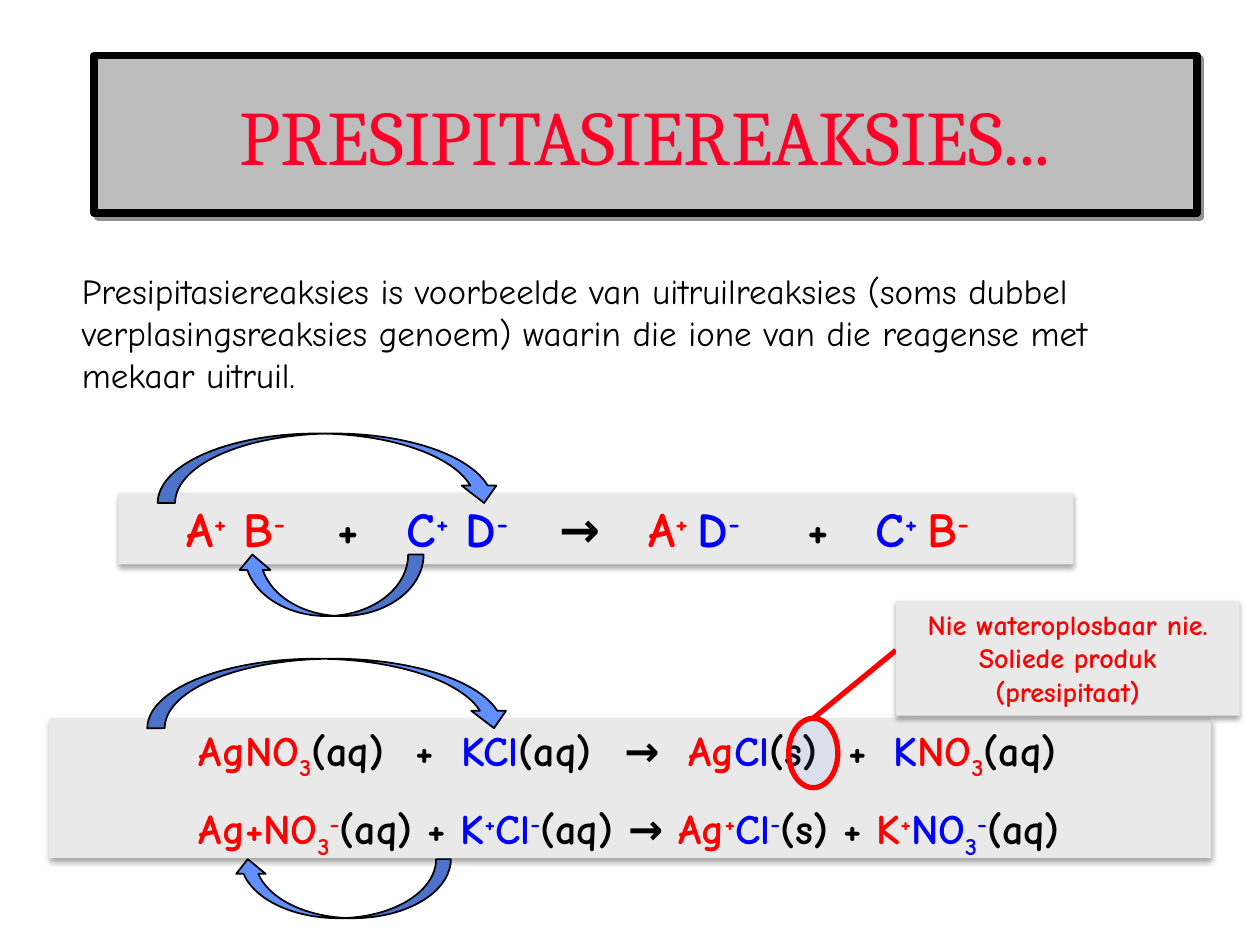
import pptx
import pptx.dml.color
import pptx.enum.shapes
import pptx.enum.text
import pptx.oxml
import pptx.oxml.ns
import pptx.util

Cm, Pt = pptx.util.Cm, pptx.util.Pt
RGBColor = pptx.dml.color.RGBColor
SHAPES = pptx.enum.shapes.MSO_SHAPE
ALIGN = pptx.enum.text.PP_ALIGN
ANCHOR = pptx.enum.text.MSO_ANCHOR

RED = RGBColor(0xFF, 0x00, 0x00)
BLUE = RGBColor(0x00, 0x00, 0xFF)
BLACK = RGBColor(0x00, 0x00, 0x00)
TITLE_RED = RGBColor(0xFC, 0x01, 0x28)
TITLE_GREY = RGBColor(0xBD, 0xBD, 0xBD)
PANEL_GREY = RGBColor(0xE9, 0xE9, 0xE9)
TITLE_SHADOW = RGBColor(0x91, 0x91, 0x91)
ARROW_BLUE = RGBColor(0x61, 0x8F, 0xFD)

BODY = "Comic Neue"
BASELINES = {"^": "30000", "_": "-25000"}
PANEL_SHADOW = (BLACK, 35, 3.1, 1.8, 90)

GENERAL = [
    [(RED, "A", "^+", " B", "^-"), (BLACK, "\t+\t"), (BLUE, "C", "^+", " D", "^-"),
     (BLACK, "\t→\t"), (RED, "A", "^+ "), (BLUE, "D", "^-"), (BLACK, "\t+\t"),
     (BLUE, "C", "^+ "), (RED, "B", "^-")],
]
EXAMPLE = [
    [(RED, "AgNO", "_3"), (BLACK, "(aq)\t+\t"), (BLUE, "KCl"), (BLACK, "(aq)\t→\t"),
     (RED, "Ag"), (BLUE, "Cl"), (BLACK, "(s)\t+\t"), (BLUE, "K"), (RED, "NO", "_3"),
     (BLACK, "(aq)")],
    [(RED, "Ag+NO", "_3", "^-"), (BLACK, "(aq) + "), (BLUE, "K", "^+", "Cl", "^-"),
     (BLACK, "(aq) → "), (RED, "Ag", "^+"), (BLUE, "Cl", "^-"), (BLACK, "(s) + "),
     (RED, "K", "^+"), (BLUE, "NO", "_3", "^-"), (BLACK, "(aq)")],
]


def apply(target, values):
    """Set every attribute in values on target."""
    for name, value in values.items():
        setattr(target, name, value)


def xml(tag, content="", attributes=""):
    """Return a DrawingML element."""
    namespace = pptx.oxml.ns.nsdecls("a")
    return pptx.oxml.parse_xml(f"<a:{tag} {namespace} {attributes}>{content}</a:{tag}>")


def add_box(slide, kind, box, fill, line=None, line_width=0, shadow=None):
    """Add a filled preset shape with an optional outline and shadow."""
    shape = slide.shapes.add_shape(kind, *map(Cm, box))
    shape.shadow.inherit = False
    shape.fill.solid()
    shape.fill.fore_color.rgb = fill
    if line is None:
        shape.line.fill.background()
    else:
        shape.line.color.rgb = line
        shape.line.width = Pt(line_width)
    if shadow:
        colour, alpha, blur, distance, angle = shadow
        effects = shape._element.spPr.find(pptx.oxml.ns.qn("a:effectLst"))
        effects.append(xml(
            "outerShdw",
            f'<a:srgbClr val="{colour}"><a:alpha val="{alpha * 1000}"/></a:srgbClr>',
            f'blurRad="{Pt(blur)}" dist="{Pt(distance)}" dir="{angle * 60000}" '
            'algn="ctr" rotWithShape="0"'))
    return shape


def write(paragraph, pieces, font, align=ALIGN.LEFT, tabs=()):
    """Write coloured pieces, where ^ raises and _ lowers a part."""
    paragraph.alignment = align
    properties = paragraph._p.get_or_add_pPr()
    properties.append(xml("spcBef", '<a:spcPct val="50000"/>'))
    if tabs:
        stops = "".join(f'<a:tab pos="{Cm(stop)}" algn="l"/>' for stop in tabs)
        properties.append(xml("tabLst", stops))
    for colour, *parts in pieces:
        for part in parts:
            run = paragraph.add_run()
            run.text = part.lstrip("^_")
            apply(run.font, font)
            run.font.color.rgb = colour
            if part[0] in BASELINES:
                run._r.get_or_add_rPr().set("baseline", BASELINES[part[0]])


def add_title(slide, box):
    """Place the framed title."""
    banner = add_box(slide, SHAPES.RECTANGLE, box, TITLE_GREY, BLACK, 4.5,
                     (TITLE_SHADOW, 100, 0, 2.8, 45))
    apply(banner.text_frame, {"word_wrap": True, "vertical_anchor": ANCHOR.MIDDLE})
    heading = banner.text_frame.paragraphs[0]
    heading.alignment = ALIGN.CENTER
    heading.text = "PRESIPITASIEREAKSIES..."
    apply(heading.runs[0].font, {"size": Pt(44), "name": "Cambria"})
    heading.runs[0].font.color.rgb = TITLE_RED


def add_definition(slide, box):
    """Place the definition."""
    definition = slide.shapes.add_textbox(*map(Cm, box)).text_frame
    definition.word_wrap = True
    write(definition.paragraphs[0], [(BLACK, (
        "Presipitasiereaksies is voorbeelde van uitruilreaksies (soms dubbel "
        "verplasingsreaksies genoem) waarin die ione van die reagense met "
        "mekaar uitruil."))], {"size": Pt(20), "name": BODY})


def add_reaction(slide, box, equations, size, indent, tabs, over, under):
    """Place a panel of equations with exchange arrows over and under it."""
    left, top = box[:2]
    panel = add_box(slide, SHAPES.RECTANGLE, box, PANEL_GREY, shadow=PANEL_SHADOW)
    frame = panel.text_frame
    apply(frame, {"word_wrap": True, "vertical_anchor": ANCHOR.TOP,
                  "margin_left": Cm(indent), "margin_right": 0})
    font = {"size": Pt(size), "name": BODY, "bold": True}
    for number, equation in enumerate(equations):
        paragraph = frame.add_paragraph() if number else frame.paragraphs[0]
        write(paragraph, equation, font, tabs=tabs)
    for kind, (x, y, width, height) in ((SHAPES.CURVED_DOWN_ARROW, over),
                                        (SHAPES.CURVED_UP_ARROW, under)):
        arrow = add_box(slide, kind, (left + x, top + y, width, height),
                        ARROW_BLUE, BLACK, 1)
        if kind == SHAPES.CURVED_UP_ARROW:
            arrow._element.spPr.xfrm.set("flipH", "1")


def add_callout(slide, box, ring_offset):
    """Place the note, the ring around the solid state and their link."""
    left, top = box[:2]
    ring = add_box(slide, SHAPES.OVAL,
                   (left + ring_offset[0], top + ring_offset[1], 0.99, 1.4),
                   ARROW_BLUE, RED, 3)
    ring_colour = ring._element.spPr.find(".//" + pptx.oxml.ns.qn("a:srgbClr"))
    ring_colour.append(xml("alpha", attributes='val="10000"'))
    link = slide.shapes.add_connector(
        pptx.enum.shapes.MSO_CONNECTOR.STRAIGHT, Cm(left), Cm(top + 0.99),
        ring.left + ring.width // 2, ring.top)
    link.end_connect(ring, 0)
    link.line.color.rgb = RED
    link.line.width = Pt(3)
    link._element.spPr.append(xml("effectLst"))
    note = add_box(slide, SHAPES.RECTANGLE, box, PANEL_GREY, shadow=PANEL_SHADOW)
    apply(note.text_frame, {"word_wrap": True, "vertical_anchor": ANCHOR.TOP})
    write(note.text_frame.paragraphs[0],
          [(RED, "Nie wateroplosbaar nie. Soliede produk (presipitaat)")],
          {"size": Pt(16), "name": BODY, "bold": True}, ALIGN.CENTER)


def main():
    """Build and save the slide."""
    deck = pptx.Presentation()
    apply(deck, {"slide_width": Cm(25.4), "slide_height": Cm(19.05)})
    slide = deck.slides.add_slide(deck.slide_layouts[6])
    add_definition(slide, (1.4, 5.31, 23.22, 2.82))
    add_title(slide, (1.9, 1.12, 22.23, 3.18))
    add_reaction(slide, (2.39, 9.93, 19.25, 1.45), GENERAL, 28, 1.38,
                 (3.04, 4.43, 7.5, 9.3, 12.5, 13.88),
                 (0.79, -1.19, 6.93, 1.4), (2.39, 1.25, 3.76, 1.24))
    add_reaction(slide, (0.99, 14.48, 23.42, 2.82), EXAMPLE, 24, 3.02,
                 (4.36, 5.3, 8.58, 9.87, 13.1, 14.01),
                 (1.98, -1.2, 7.34, 1.4), (3.71, 2.84, 4.39, 1.19))
    add_callout(slide, (18.06, 12.12, 6.93, 2.31), (-2.16, 2.36))
    deck.save("out.pptx")


if __name__ == "__main__":
    main()
